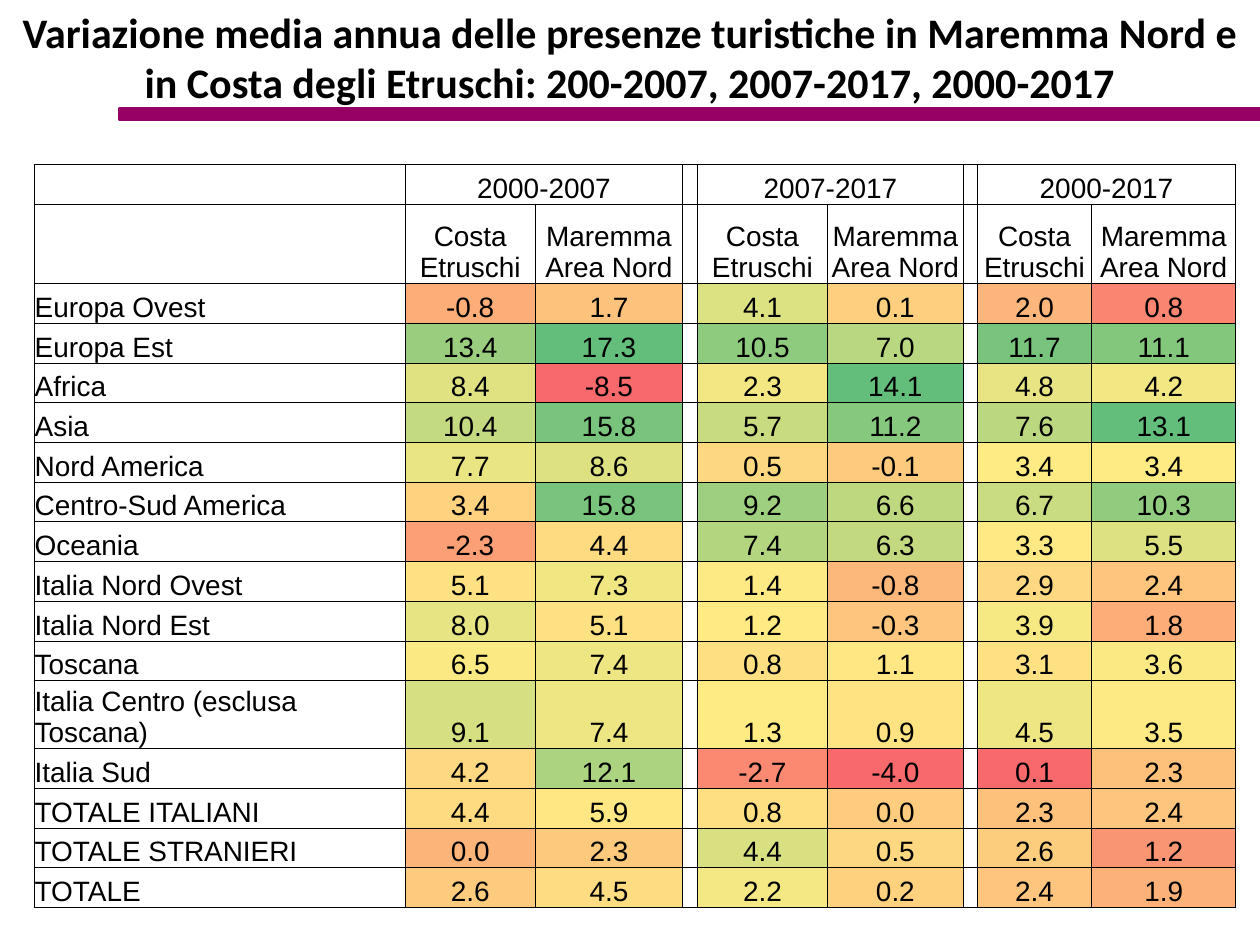
from lxml.etree import SubElement
from pptx import Presentation
from pptx.dml.color import RGBColor
from pptx.enum.shapes import MSO_SHAPE
from pptx.enum.text import MSO_ANCHOR, PP_ALIGN
from pptx.oxml.ns import qn
from pptx.util import Cm, Pt

BLACK = RGBColor(0x00, 0x00, 0x00)
PLUM = RGBColor(0x96, 0x00, 0x64)
RED = RGBColor(0xF8, 0x69, 0x6B)
YELLOW = RGBColor(0xFF, 0xEB, 0x84)
GREEN = RGBColor(0x63, 0xBE, 0x7B)

TITLE = ("Variazione media annua delle presenze turistiche in Maremma Nord e "
         "in Costa degli Etruschi: 200-2007, 2007-2017, 2000-2017")
YEARS = ["2000-2007", "2007-2017", "2000-2017"]
AREAS = ["Costa Etruschi", "Maremma Area Nord"]
STARTS = [1, 4, 7]  # first column of each period
WIDTHS = [7.47, 2.62, 2.97, 0.3, 2.62, 2.74, 0.28, 2.31, 2.9]
HEAD, ROW, TALL = 1.6, 0.8, 1.37
LONG = "Italia Centro (esclusa Toscana)"
DATA = [
    ("Europa Ovest", -0.8, 1.7, 4.1, 0.1, 2.0, 0.8),
    ("Europa Est", 13.4, 17.3, 10.5, 7.0, 11.7, 11.1),
    ("Africa", 8.4, -8.5, 2.3, 14.1, 4.8, 4.2),
    ("Asia", 10.4, 15.8, 5.7, 11.2, 7.6, 13.1),
    ("Nord America", 7.7, 8.6, 0.5, -0.1, 3.4, 3.4),
    ("Centro-Sud America", 3.4, 15.8, 9.2, 6.6, 6.7, 10.3),
    ("Oceania", -2.3, 4.4, 7.4, 6.3, 3.3, 5.5),
    ("Italia Nord Ovest", 5.1, 7.3, 1.4, -0.8, 2.9, 2.4),
    ("Italia Nord Est", 8.0, 5.1, 1.2, -0.3, 3.9, 1.8),
    ("Toscana", 6.5, 7.4, 0.8, 1.1, 3.1, 3.6),
    (LONG, 9.1, 7.4, 1.3, 0.9, 4.5, 3.5),
    ("Italia Sud", 4.2, 12.1, -2.7, -4.0, 0.1, 2.3),
    ("TOTALE ITALIANI", 4.4, 5.9, 0.8, 0.0, 2.3, 2.4),
    ("TOTALE STRANIERI", 0.0, 2.3, 4.4, 0.5, 2.6, 1.2),
    ("TOTALE", 2.6, 4.5, 2.2, 0.2, 2.4, 1.9),
]


def write(frame, text, size=16, font="Arial", bold=False,
          align=PP_ALIGN.CENTER):
    para = frame.paragraphs[0]
    para.alignment = align
    run = para.add_run()
    run.text = text
    run.font.size = Pt(size)
    run.font.name = font
    run.font.bold = bold
    run.font.color.rgb = BLACK


def blend(low, high, part):
    return RGBColor(*(round(a + (b - a) * part) for a, b in zip(low, high)))


def shade(value, group):
    """Three-colour scale: minimum, median, maximum of the group."""
    group = sorted(group)
    half = len(group) // 2
    mid = (group[half - 1] + group[half]) / 2
    if value <= mid:
        return blend(RED, YELLOW, (value - group[0]) / (mid - group[0]))
    return blend(YELLOW, GREEN, (value - mid) / (group[-1] - mid))


def style(cell):
    """Plain cell: no insets, no fill, thin black borders."""
    cell.margin_left = cell.margin_right = 0
    cell.margin_top = cell.margin_bottom = 0
    cell.vertical_anchor = MSO_ANCHOR.BOTTOM
    props = cell._tc.get_or_add_tcPr()
    for side in ("L", "R", "T", "B"):
        line = SubElement(props, qn(f"a:ln{side}"), w=str(Pt(0.5)))
        fill = SubElement(line, qn("a:solidFill"))
        SubElement(fill, qn("a:srgbClr"), val=str(BLACK))
    cell.fill.background()
    # Keeps empty cells from growing their row
    para = cell.text_frame.paragraphs[0]
    SubElement(para._p, qn("a:endParaRPr"), sz="1600")


def add_head(slide, left, top, width, height):
    # Title
    title = slide.shapes.title
    title.left, title.top = Cm(left), Cm(top)
    title.width, title.height = Cm(width), Cm(height)
    title.text_frame.word_wrap = True
    title.text_frame.vertical_anchor = MSO_ANCHOR.TOP
    write(title.text_frame, TITLE, size=24, font="Calibri", bold=True)

    # Rule under the title
    rule = slide.shapes.add_shape(
        MSO_SHAPE.RECTANGLE, Cm(left + 2.41), Cm(top + 2.2),
        Cm(width - 2.41), Cm(0.2))
    rule.shadow.inherit = False
    rule.fill.solid()
    rule.fill.fore_color.rgb = PLUM
    rule.line.color.rgb = PLUM
    rule.line.width = Pt(2)


def add_grid(slide, left, top, width, height):
    grid = slide.shapes.add_table(
        len(DATA) + 2, len(WIDTHS), Cm(left), Cm(top),
        Cm(width), Cm(height)).table
    grid.first_row = grid.horz_banding = False
    for col, size in zip(grid.columns, WIDTHS):
        col.width = Cm(size)
    sizes = [ROW, HEAD] + [TALL if r[0] == LONG else ROW for r in DATA]
    for row, size in zip(grid.rows, sizes):
        row.height = Cm(size)
    for cell in grid.iter_cells():
        style(cell)

    # Row names
    for y, row in enumerate(DATA, 2):
        write(grid.cell(y, 0).text_frame, row[0], align=PP_ALIGN.LEFT)

    # Periods, each with two areas and its own colour scale
    for k, (year, start) in enumerate(zip(YEARS, STARTS)):
        grid.cell(0, start).merge(grid.cell(0, start + 1))
        write(grid.cell(0, start).text_frame, year)
        for x, area in enumerate(AREAS, start):
            write(grid.cell(1, x).text_frame, area)
        pairs = [row[2 * k + 1:2 * k + 3] for row in DATA]
        group = [value for pair in pairs for value in pair]
        for y, pair in enumerate(pairs, 2):
            for x, value in enumerate(pair, start):
                cell = grid.cell(y, x)
                write(cell.text_frame, f"{value:.1f}")
                cell.fill.solid()
                cell.fill.fore_color.rgb = shade(value, group)


def main():
    deck = Presentation()
    deck.slide_width, deck.slide_height = Cm(25.4), Cm(19.05)
    slide = deck.slides.add_slide(deck.slide_layouts[5])
    add_head(slide, 0, 0, 25.4, 3.07)
    add_grid(slide, 0.7, 3.32, sum(WIDTHS), 14.97)
    deck.save("out.pptx")


if __name__ == "__main__":
    main()
